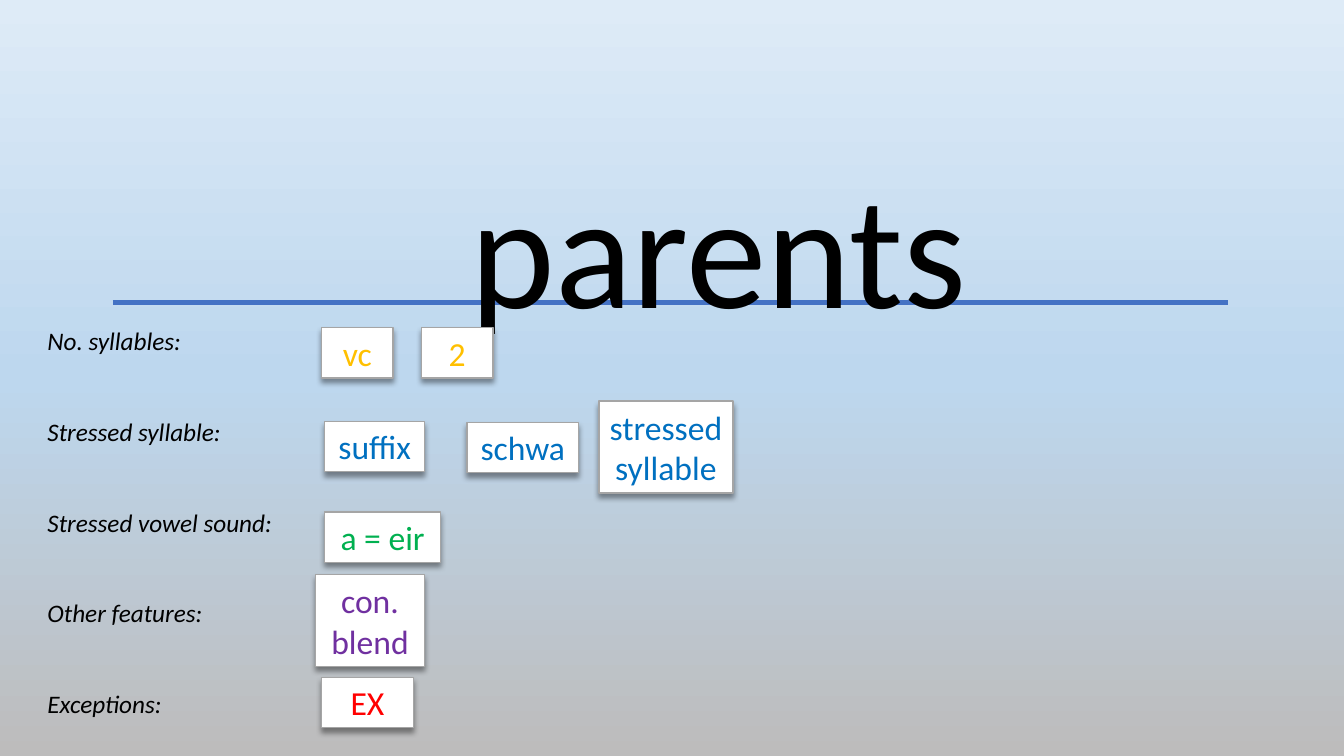
import copy

import pptx
import pptx.dml.color
import pptx.enum.shapes
import pptx.enum.text
import pptx.oxml
import pptx.oxml.ns
import pptx.util
from pptx.util import Inches, Pt

FONT = "Calibri"
COLORS = {
    "sky": "DEEBF7", "blue": "BDD7EE", "grey": "BDBCBC",
    "rule": "4472C4", "border": "A5A5A5", "white": "FFFFFF", "black": "000000",
    "syllables": "FFC000", "stress": "0070C0", "vowel": "00B050",
    "features": "7030A0", "exceptions": "FF0000",
}
LABELS = ["No. syllables:", "Stressed syllable:", "Stressed vowel sound:",
          "Other features:", "Exceptions:"]
# paragraphs, colour, left, top, width, height
CARDS = [
    (["schwa"], "stress", 4.63, 4.19, 1.11, 0.5),
    (["suffix"], "stress", 3.22, 4.18, 0.99, 0.5),
    (["stressed", "syllable"], "stress", 5.94, 3.98, 1.33, 0.91),
    (["a = eir"], "vowel", 3.22, 5.08, 1.15, 0.5),
    (["vc"], "syllables", 3.19, 3.25, 0.71, 0.5),
    (["2"], "syllables", 4.18, 3.25, 0.71, 0.5),
    (["EX"], "exceptions", 3.19, 6.72, 0.91, 0.5),
    (["con. blend"], "features", 3.13, 5.7, 1.08, 0.91),
]


def rgb(name):
    return pptx.dml.color.RGBColor.from_string(COLORS[name])


def set_effects(shape, inner=""):
    """Give the shape its own effect list; an empty one means no shadow."""
    spPr = shape._element.spPr
    for old in spPr.findall(pptx.oxml.ns.qn("a:effectLst")):
        spPr.remove(old)
    spPr.append(pptx.oxml.parse_xml(
        f'<a:effectLst {pptx.oxml.ns.nsdecls("a")}>{inner}</a:effectLst>'))


def set_background(s):
    fill = s.background.fill
    fill.gradient()
    fill.gradient_angle = 270
    first = s.element.find(".//" + pptx.oxml.ns.qn("a:gs"))
    first.addnext(copy.deepcopy(first))
    for i, (stop, name) in enumerate(zip(fill.gradient_stops, ["sky", "blue", "grey"])):
        stop.position = i / 2
        stop.color.rgb = rgb(name)


def place(sp, left, top, width, height):
    sp.left, sp.top = Inches(left), Inches(top)
    sp.width, sp.height = Inches(width), Inches(height)


def write(sp, lines, size, color, align, anchor, italic=False, gap=0):
    """Fill the shape with one paragraph per line, gap points apart."""
    tf = sp.text_frame
    tf.word_wrap = True
    tf.auto_size = pptx.enum.text.MSO_AUTO_SIZE.SHAPE_TO_FIT_TEXT
    tf.vertical_anchor = anchor
    for i, line in enumerate(lines):
        p = tf.paragraphs[0] if i == 0 else tf.add_paragraph()
        p.alignment = align
        p.space_before = Pt(gap if i else 0)
        r = p.add_run()
        r.text = line
        r.font.name, r.font.size = FONT, Pt(size)
        r.font.italic = italic
        r.font.color.rgb = rgb(color)


def remove_bullets(tf):
    for p in tf.paragraphs:
        pPr = p._p.get_or_add_pPr()
        pPr.set("marL", "0")
        pPr.set("indent", "0")
        pPr.append(pptx.oxml.parse_xml(f'<a:buNone {pptx.oxml.ns.nsdecls("a")}/>'))


def add_rule_behind(s, left, right, y):
    line = s.shapes.add_connector(pptx.enum.shapes.MSO_CONNECTOR.STRAIGHT,
                                  Inches(left), Inches(y), Inches(right), Inches(y))
    line.line.color.rgb = rgb("rule")
    line.line.width = Pt(3)
    set_effects(line)
    s.shapes.title._element.addprevious(line._element)


def add_card(s, lines, color, left, top, width, height):
    sp = s.shapes.add_shape(pptx.enum.shapes.MSO_SHAPE.RECTANGLE, Inches(left),
                            Inches(top), Inches(width), Inches(height))
    sp.fill.solid()
    sp.fill.fore_color.rgb = rgb("white")
    sp.line.color.rgb = rgb("border")
    sp.line.width = Pt(1)
    set_effects(sp, f'<a:outerShdw blurRad="{Pt(4)}" dist="{Pt(3)}" dir="5400000" '
                    f'algn="t" rotWithShape="0"><a:srgbClr val="{COLORS["black"]}">'
                    '<a:alpha val="40000"/></a:srgbClr></a:outerShdw>')
    write(sp, lines, 24, color, pptx.enum.text.PP_ALIGN.CENTER,
          pptx.enum.text.MSO_ANCHOR.MIDDLE)


def main():
    prs = pptx.Presentation()
    prs.slide_width, prs.slide_height = Inches(13.33), Inches(7.5)
    s = prs.slides.add_slide(prs.slide_layouts[1])
    set_background(s)

    title, labels = s.shapes.title, s.placeholders[1]
    top = pptx.enum.text.MSO_ANCHOR.TOP
    place(title, 2.21, 1.41, 9.84, 2.04)
    write(title, ["parents"], 115, "black", pptx.enum.text.PP_ALIGN.CENTER, top)
    place(labels, 0.37, 3.18, 2.45, 4.04)
    write(labels, LABELS, 18, "black", pptx.enum.text.PP_ALIGN.LEFT, top,
          italic=True, gap=43.2)
    remove_bullets(labels.text_frame)

    add_rule_behind(s, 1.12, 12.18, 3)
    for card in CARDS:
        add_card(s, *card)
    prs.save("out.pptx")


if __name__ == "__main__":
    main()
